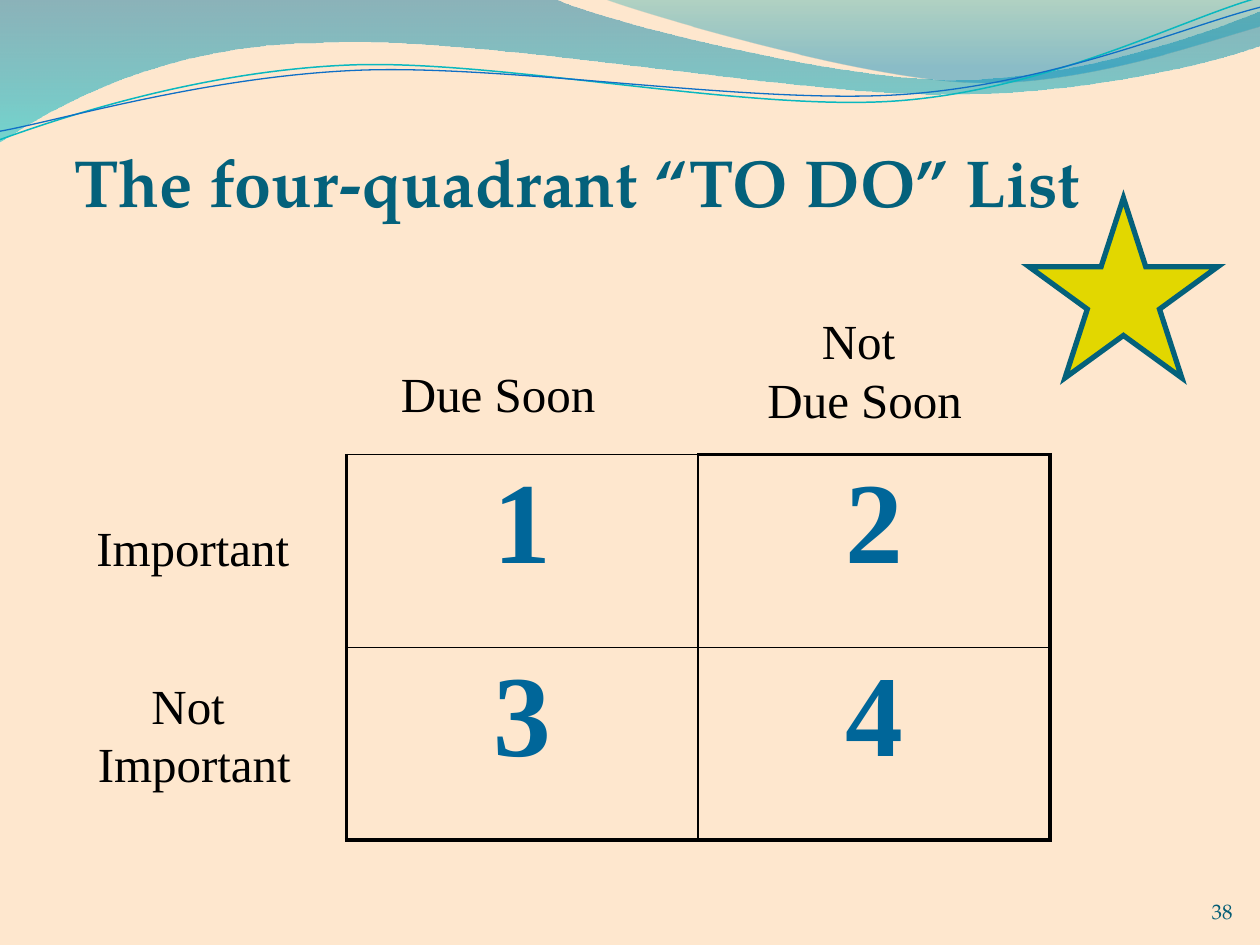
"""Build the four-quadrant to-do list slide on a grid of 120 columns by 90 rows."""
import pptx
import pptx.dml.color
import pptx.enum.shapes
import pptx.enum.text
import pptx.oxml
import pptx.oxml.ns
import pptx.util

RGB = pptx.dml.color.RGBColor.from_string
ALIGN = pptx.enum.text.PP_ALIGN
ANCHOR = pptx.enum.text.MSO_ANCHOR
FIT = pptx.enum.text.MSO_AUTO_SIZE
SHAPE = pptx.enum.shapes.MSO_SHAPE
Pt = pptx.util.Pt
NS = 'xmlns:a="http://schemas.openxmlformats.org/drawingml/2006/main"'
UNIT = pptx.util.Inches(10) / 120

theme = {
    "page": "FEE7CE", "star": "E2D700", "edge": "04617B", "rule": "000000",
    "title": {"name": "TeX Gyre Pagella", "size": Pt(38), "bold": True, "color": "04617B"},
    "number": {"name": "TeX Gyre Pagella", "size": Pt(12), "color": "045D75"},
    "label": {"name": "Times New Roman", "size": Pt(28), "color": "000000"},
    "digit": {"name": "Times New Roman", "size": Pt(66), "bold": True, "color": "006699"},
    "thick": Pt(2.25), "thin": Pt(1),
}


def grid(*cells):
    """Turn grid cells into slide lengths."""
    return [round(cell * UNIT) for cell in cells]


def write(frame, text, style, align):
    """Fill a text frame, one paragraph per line of text."""
    for i, line in enumerate(text.split("\n")):
        para = frame.add_paragraph() if i else frame.paragraphs[0]
        para.alignment = align
        run = para.add_run()
        run.text = line
        for key, value in theme[style].items():
            if key == "color":
                run.font.color.rgb = RGB(value)
            else:
                setattr(run.font, key, value)


deck = pptx.Presentation()
deck.slide_width, deck.slide_height = grid(120, 90)
slide = deck.slides.add_slide(deck.slide_layouts[6])
slide.background.fill.solid()
slide.background.fill.fore_color.rgb = RGB(theme["page"])

waves = [
    {"start": (0, -0.1), "stops": [(0, "0074A1", 45), (1, "00C6CF", 55)], "legs": [
        [(52.8, -0.1)],
        [(57.1, 2), (79.7, 7.6), (91, 7.6)],
        [(102.4, 7.6), (115, 3.1), (120, 1.1)],
        [(120.1, 4.3)],
        [(118, 5.3), (104.4, 9.1), (89.5, 9)],
        [(74.6, 9), (45.8, 3.4), (30.8, 4.1)],
        [(15.5, 4.2), (5.5, 10), (-0.1, 13.6)]]},
    {"start": (57.5, -0.1), "stops": [(0, "00A1A9", 30), (0.8, "008BBF", 45)], "legs": [
        [(61.1, 1.3), (81.8, 7.4), (92.3, 7.8)],
        [(102.7, 8.3), (115.3, 3.8), (120, 2.5)],
        [(120, 0)]]},
    {"start": (0, 13.3), "line": ("0AB8BF", 0.85), "legs": [
        [(5.8, 11.2), (19, 6.8), (33.2, 6.2)],
        [(47.4, 5.6), (71.2, 10.7), (85.6, 9.6)],
        [(100, 8.5), (112.6, 1.8), (119.8, -0.2)]]},
    {"start": (0, 12.5), "line": ("0F6FC6", 0.75), "legs": [
        [(5.6, 11.5), (19.7, 7.3), (34, 6.7)],
        [(48.4, 6.1), (71.6, 10), (86, 9)],
        [(100.3, 8), (112.9, 2.5), (120, 0.7)]]},
]
for wave in waves:
    pen = slide.shapes.build_freeform(*grid(*wave["start"]))
    pen.add_line_segments([grid(*leg[-1]) for leg in wave["legs"]], close="stops" in wave)
    shape = pen.convert_to_shape()
    shape.shadow.inherit = False
    lines = list(shape.element.spPr.iterfind(".//" + pptx.oxml.ns.qn("a:lnTo")))
    for line, leg in zip(lines, wave["legs"]):
        if len(leg) == 3:
            dots = "".join(f'<a:pt x="{x - shape.left}" y="{y - shape.top}"/>'
                           for x, y in (grid(*dot) for dot in leg))
            curve = pptx.oxml.parse_xml(f"<a:cubicBezTo {NS}>{dots}</a:cubicBezTo>")
            line.getparent().replace(line, curve)
    if "stops" in wave:
        shape.line.fill.background()
        shape.fill.gradient()
        shape.fill.gradient_angle = 270
        tints = shape.element.spPr.iterfind(".//" + pptx.oxml.ns.qn("a:gs"))
        for stop, tint, (place, color, alpha) in zip(
                shape.fill.gradient_stops, tints, wave["stops"]):
            stop.position = place
            stop.color.rgb = RGB(color)
            tint[0].append(pptx.oxml.parse_xml(f'<a:alpha {NS} val="{alpha * 1000}"/>'))
    else:
        shape.fill.background()
        shape.line.color.rgb = RGB(wave["line"][0])
        shape.line.width = Pt(wave["line"][1])

bare = {"margin_left": 0, "margin_right": 0, "margin_bottom": 0,
        "vertical_anchor": ANCHOR.BOTTOM, "word_wrap": True}
loose = {"word_wrap": False, "auto_size": FIT.SHAPE_TO_FIT_TEXT}
wrap = {**loose, "word_wrap": True}
texts = [
    ("The four-quadrant “TO DO” List", (4, 6, 102, 15), "title", ALIGN.CENTER, bare),
    ("38", (92.4, 82, 25, 6), "number", ALIGN.RIGHT, {**bare, "margin_top": 0}),
    ("Important", (8, 48.7, 21, 6.85), "label", ALIGN.LEFT, loose),
    ("Not \nImportant", (8, 63.7, 21, 12.5), "label", ALIGN.CENTER, loose),
    ("Due Soon", (37, 34, 27, 6.85), "label", ALIGN.LEFT, wrap),
    ("Not \nDue Soon", (71.8, 29, 21.1, 12.5), "label", ALIGN.CENTER, loose),
]
for text, place, style, align, form in texts:
    frame = slide.shapes.add_textbox(*grid(*place)).text_frame
    for key, value in form.items():
        setattr(frame, key, value)
    write(frame, text, style, align)

table = slide.shapes.add_table(2, 2, *grid(33, 43.3, 67, 36.7)).table
for key in ("first_row", "horz_banding"):
    setattr(table, key, False)
for n in range(4):
    row, col = divmod(n, 2)
    cell = table.cell(row, col)
    cell.fill.background()
    write(cell.text_frame, str(n + 1), "digit", ALIGN.CENTER)
    heavy = {"L": col == 0, "R": col == 1, "T": n == 1, "B": row == 1}
    for i, (side, bold) in enumerate(heavy.items()):
        width = theme["thick" if bold else "thin"]
        cell._tc.get_or_add_tcPr().insert(i, pptx.oxml.parse_xml(
            f'<a:ln{side} {NS} w="{width}"><a:solidFill>'
            f'<a:srgbClr val="{theme["rule"]}"/></a:solidFill></a:ln{side}>'))

star = slide.shapes.add_shape(SHAPE.STAR_5_POINT, *grid(98, 18.85, 18, 17.15))
star.shadow.inherit = False
star.fill.solid()
star.fill.fore_color.rgb = RGB(theme["star"])
star.line.color.rgb = RGB(theme["edge"])
star.line.width = Pt(3)
star.line._get_or_add_ln().append(pptx.oxml.parse_xml(f'<a:miter {NS} lim="800000"/>'))

deck.save("out.pptx")
